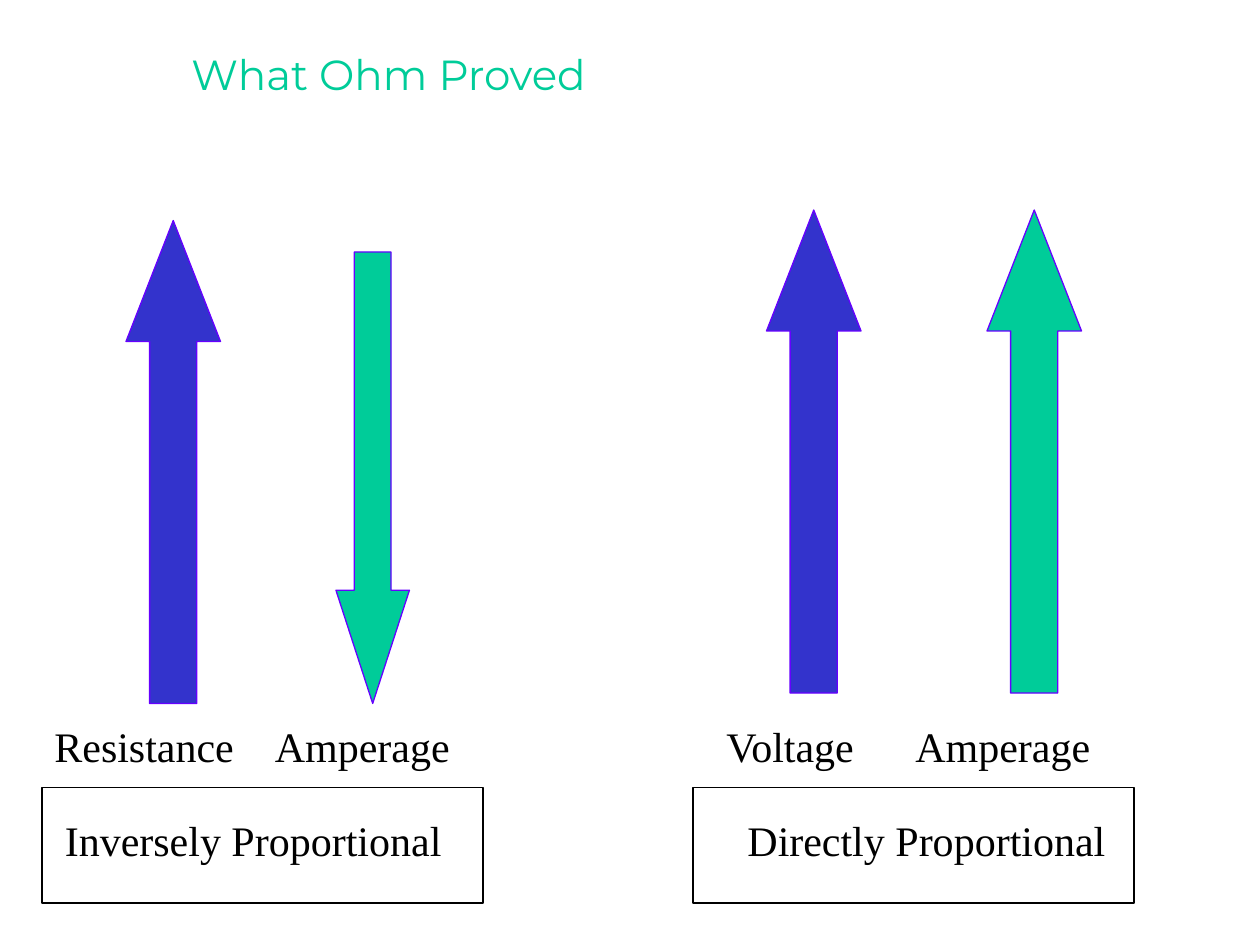
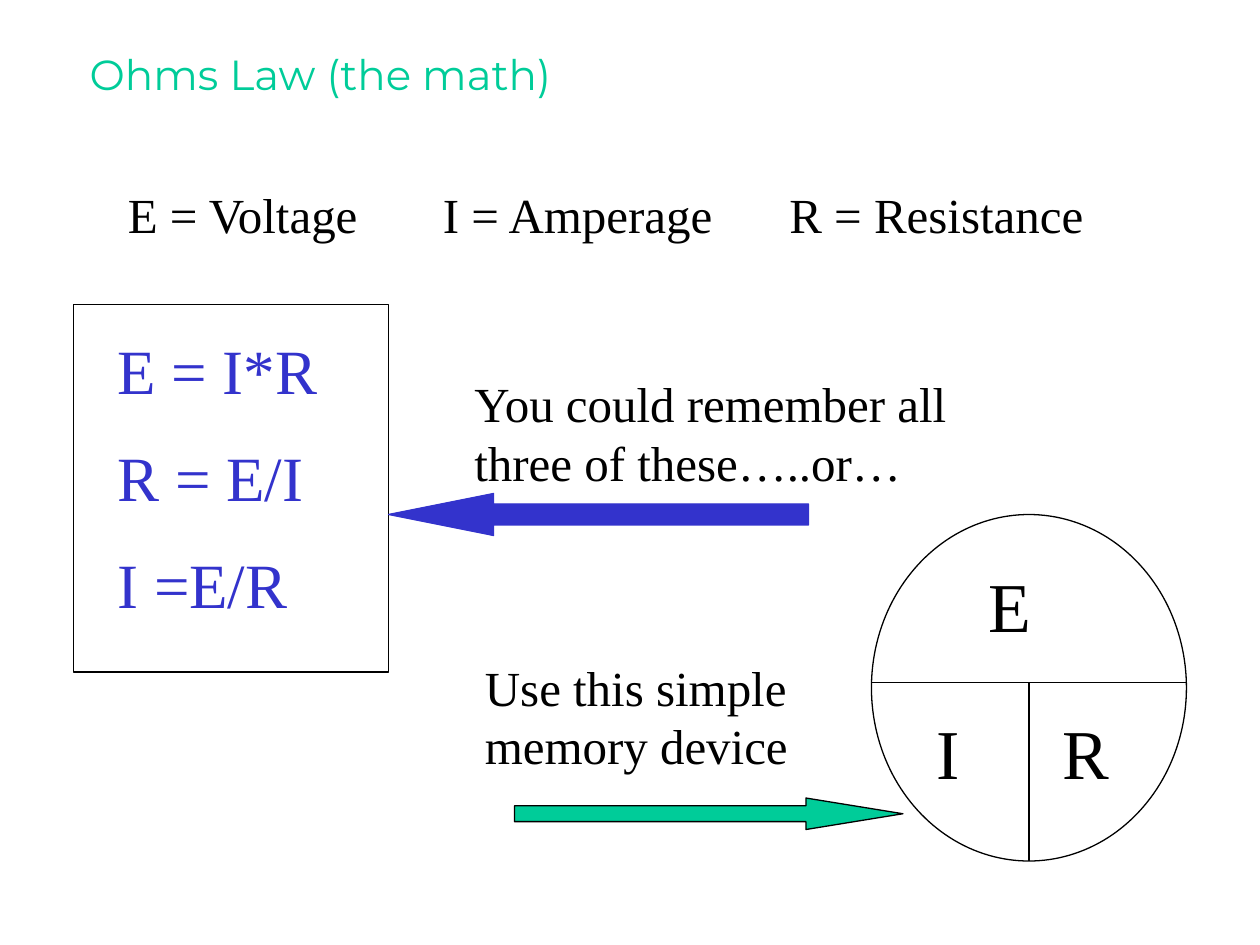
from lxml.etree import SubElement
from pptx import Presentation
from pptx.dml.color import RGBColor
from pptx.enum.shapes import MSO_CONNECTOR, MSO_SHAPE
from pptx.enum.text import MSO_AUTO_SIZE, PP_ALIGN
from pptx.oxml.ns import qn
from pptx.util import Inches, Pt

# Shared look: every place is given as columns and rows of a 120 by 90 grid
BLUE, GREEN, VIOLET, BLACK = "3333CC", "00CC99", "6600FF", "000000"
SERIF, SANS = "Times New Roman", "Montserrat"
deck = Presentation()
deck.slide_width, deck.slide_height = Inches(10), Inches(7.5)
cell = deck.slide_width // 120
color = RGBColor.from_string


def write(slide, box, lines, size=24, ink=BLACK, face=SERIF, title=False, tabs=()):
    frame = slide.shapes.add_textbox(*[n * cell for n in box]).text_frame
    frame.word_wrap = not title
    frame.auto_size = MSO_AUTO_SIZE.NONE if title else MSO_AUTO_SIZE.SHAPE_TO_FIT_TEXT
    frame.text = lines
    for para in frame.paragraphs:
        props = para._p.get_or_add_pPr()
        if title:
            para.alignment = PP_ALIGN.CENTER
        else:
            # Half a line of space before
            space = SubElement(props, qn("a:spcBef"))
            SubElement(space, qn("a:spcPct"), val="50000")
        if tabs:
            stops = SubElement(props, qn("a:tabLst"))
            for stop in tabs:
                SubElement(stops, qn("a:tab"), pos=str(stop * cell), algn="l")
        font = para.font
        font.name, font.size = face, Pt(size)
        font.color.rgb = color(ink)


def draw(slide, kind, box, fill=None, edge=BLACK, head=None):
    shape = slide.shapes.add_shape(kind, *[n * cell for n in box])
    shape.shadow.inherit = False
    shape.line.color.rgb = color(edge)
    shape.line.width = Pt(0.75)
    if fill:
        shape.fill.solid()
        shape.fill.fore_color.rgb = color(fill)
    else:
        shape.fill.background()
    if head:
        shape.adjustments[0] = 0.5
        shape.adjustments[1] = head


# Slides and titles
pages = []
for text, width in (("What Ohm Proved", 64), ("Ohms Law (the math)", 51)):
    page = deck.slides.add_slide(deck.slide_layouts[6])
    write(page, (5, 4, width, 8), text, ink=GREEN, face=SANS, title=True)
    pages.append(page)
proof, math = pages

# Proof: arrows
up, down = MSO_SHAPE.UP_ARROW, MSO_SHAPE.DOWN_ARROW
for kind, box, fill, head in (
    (up, (12, 21, 9, 46), BLUE, 1.28),
    (down, (32, 24, 7, 43), GREEN, 1.54),
    (up, (73, 20, 9, 46), BLUE, 1.28),
    (up, (94, 20, 9, 46), GREEN, 1.28),
):
    draw(proof, kind, box, fill, VIOLET, head)

# Proof: arrow names
for left, width, text in (
    (4, 20, "Resistance"),
    (25, 29, "Amperage"),
    (68, 18, "Voltage"),
    (86, 29, "Amperage"),
):
    write(proof, (left, 68, width, 6), text)

# Proof: framed findings
for left, inset, width, text in (
    (4, 1, 43, "Inversely Proportional"),
    (66, 4, 38, "Directly Proportional"),
):
    write(proof, (left + inset, 77, width, 6), text)
    draw(proof, MSO_SHAPE.RECTANGLE, (left, 75, 42, 11))

# Math: symbols and formulas
write(math, (11, 17, 104, 7), "E = Voltage\tI = Amperage\tR = Resistance", 28, tabs=(30, 63))
write(math, (10, 31, 26, 30), "E = I*R\nR = E/I\nI =E/R", 36, BLUE)
draw(math, MSO_SHAPE.RECTANGLE, (7, 29, 30, 35))

# Math: hints with their arrows
write(math, (44, 35, 52, 12), "You could remember all three of these…..or…", 28)
draw(math, MSO_SHAPE.LEFT_ARROW, (37, 47, 40, 4), BLUE, BLUE, 2.5)
write(math, (45, 62, 36, 12), "Use this simple memory device", 28)
draw(math, MSO_SHAPE.RIGHT_ARROW, (49, 76, 37, 3), GREEN, BLACK, 3.08)

# Math: memory wheel
draw(math, MSO_SHAPE.OVAL, (83, 49, 30, 33))
for ends in ((83, 65, 113, 65), (98, 65, 98, 82)):
    line = math.shapes.add_connector(MSO_CONNECTOR.STRAIGHT, *[n * cell for n in ends])
    line.line.color.rgb = color(BLACK)
    line.line.width = Pt(0.75)
    SubElement(line._element.spPr, qn("a:effectLst"))
for left, top, text in ((93, 53, "E"), (88, 67, "I"), (100, 67, "R")):
    write(math, (left, top, 9, 9), text, 40)

deck.save("out.pptx")
